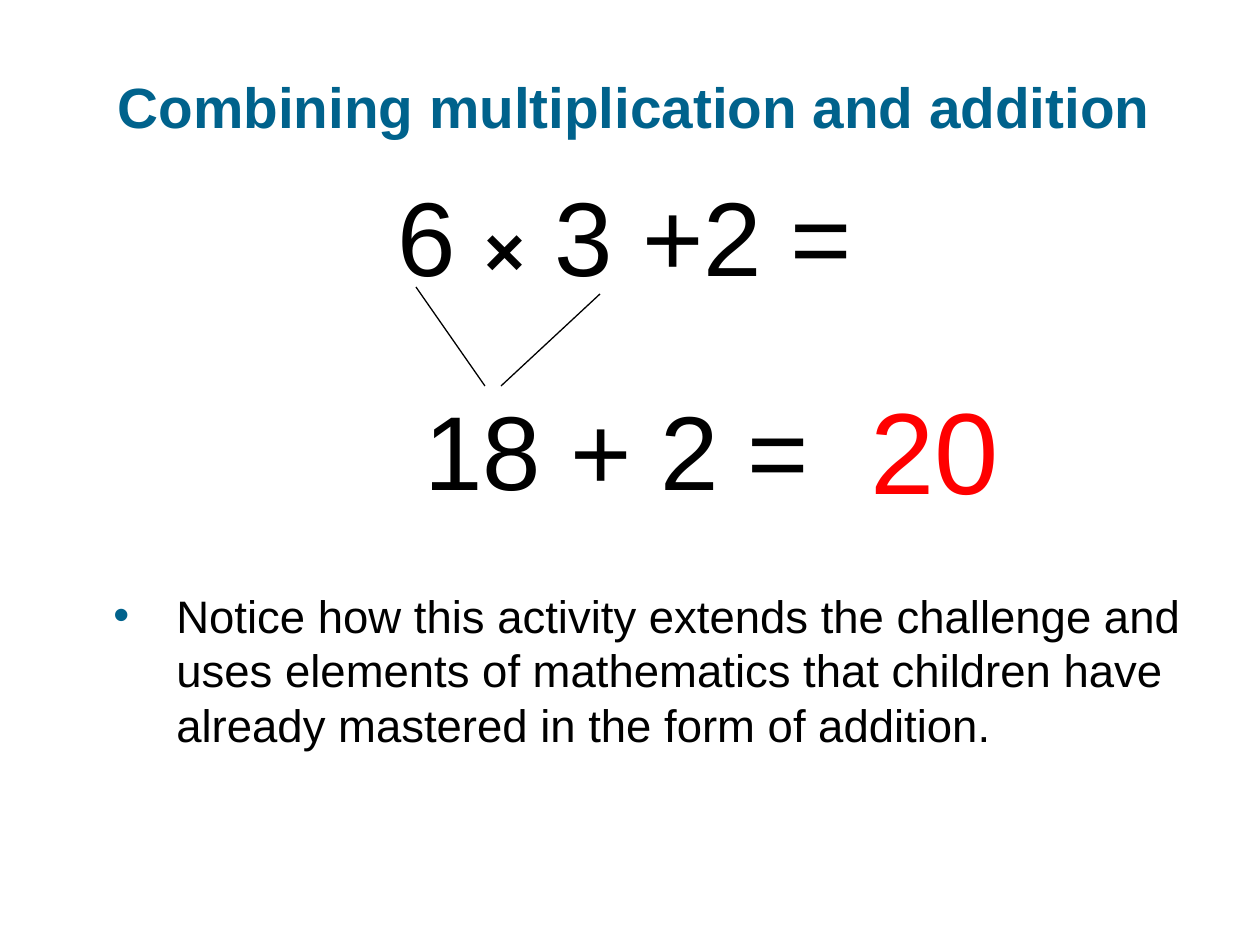
import pptx
import pptx.util
import pptx.dml.color
import pptx.enum.shapes
import pptx.enum.text
import pptx.oxml
import pptx.oxml.ns

PX = 914400 // 126
BLUE, BLACK, RED = "00628C", "000000", "FF0000"

TITLE = ("Combining multiplication and addition", (105, 66, 1092, 157))
SUM = [("6 ", 60, False), ("×", 40, True), (" 3 +2 =", 60, False)]
SUM_BOX, SUM_INDENT = (95, 165, 1134, 140), 290
STEPS = [
    ("18 + 2 =", 60, BLACK, (412, 379, 442, 140)),
    ("20", 66, RED, (858, 373, 179, 152)),
]
NOTE = ("Notice how this activity extends the challenge and uses elements of "
        "mathematics that children have already mastered in the form of addition.")
NOTE_BOX, NOTE_INDENT = (101, 591, 1134, 157), 63
LINES = [(416, 287, 485, 386), (600, 294, 501, 386)]


def px(*nums):
    return [pptx.util.Emu(n * PX) for n in nums]


def hue(code):
    return pptx.dml.color.RGBColor.from_string(code)


def style(font, size, color, bold=False):
    font.name = "Arial"
    font.size = pptx.util.Pt(size)
    font.color.rgb = hue(color)
    font.bold = bold


def text_box(box):
    frame = slide.shapes.add_textbox(*px(*box)).text_frame
    frame.word_wrap = True
    return frame


def add(parent, tag, **attrs):
    node = pptx.oxml.parse_xml(f"<a:{tag} {pptx.oxml.ns.nsdecls('a')}/>")
    for key, value in attrs.items():
        node.set(key, value)
    parent.append(node)
    return node


deck = pptx.Presentation()
deck.slide_width, deck.slide_height = pptx.util.Inches(10), pptx.util.Inches(7.5)
slide = deck.slides.add_slide(deck.slide_layouts[5])

title = slide.shapes.title
title.left, title.top, title.width, title.height = px(*TITLE[1])
title.text_frame.text = TITLE[0]
title.text_frame.vertical_anchor = pptx.enum.text.MSO_ANCHOR.TOP
head = title.text_frame.paragraphs[0]
head.alignment = pptx.enum.text.PP_ALIGN.LEFT
style(head.font, 32.4, BLUE, True)

for ends in LINES:
    line = slide.shapes.add_connector(
        pptx.enum.shapes.MSO_CONNECTOR.STRAIGHT, *px(*ends))
    line.line.color.rgb = hue(BLACK)
    line.line.width = pptx.util.Pt(0.75)
    add(line._element.spPr, "effectLst")

for text, size, color, box in STEPS:
    para = text_box(box).paragraphs[0]
    para.text = text
    style(para.font, size, color)

para = text_box(SUM_BOX).paragraphs[0]
para._p.get_or_add_pPr().set("marL", str(SUM_INDENT * PX))
for text, size, bold in SUM:
    run = para.add_run()
    run.text = text
    style(run.font, size, BLACK, bold)

frame = text_box(NOTE_BOX)
frame.vertical_anchor = pptx.enum.text.MSO_ANCHOR.MIDDLE
para = frame.paragraphs[0]
para.text = NOTE
props = para._p.get_or_add_pPr()
props.set("marL", str(NOTE_INDENT * PX))
props.set("indent", str(-NOTE_INDENT * PX))
add(add(props, "buClr"), "srgbClr", val=BLUE)
add(props, "buFont", typeface="Arial")
add(props, "buChar", char="•")
style(para.font, 26, BLACK)

deck.save("out.pptx")
